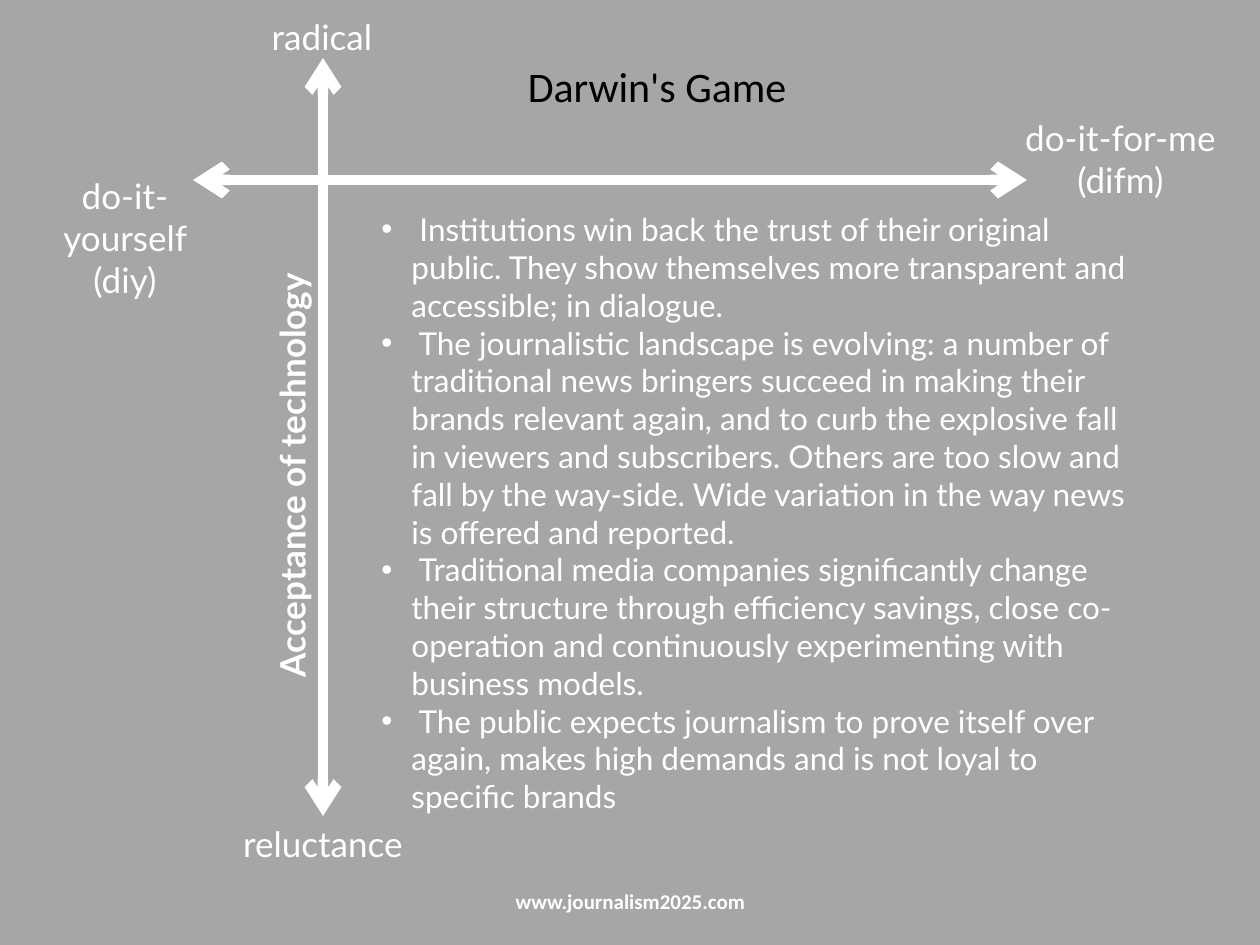
from lxml.etree import SubElement
from pptx import Presentation
from pptx.dml.color import RGBColor as RGB
from pptx.enum.shapes import MSO_CONNECTOR as CONN
from pptx.enum.text import MSO_ANCHOR as ANCHOR, PP_ALIGN as ALIGN
from pptx.oxml.ns import qn
from pptx.util import Pt

PX = 914400 / 126
COLORS = {"background": "A6A6A6", "light": "FFFFFF", "title": "000000"}
AXES = [(323, 816, 323, 58), (193, 180, 1027, 180)]
POLES = [
    ("do-it-for-me (difm)", (968, 110, 305, 55)),
    ("do-it-yourself (diy)", (30, 168, 190, 140)),
    ("radical", (178, 9, 288, 55)),
    ("reluctance", (179, 816, 288, 55)),
]
POINTS = [
    " Institutions win back the trust of their original public. They show "
    "themselves more transparent and accessible; in dialogue.",
    " The journalistic landscape is evolving: a number of traditional news "
    "bringers succeed in making their brands relevant again, and to curb the "
    "explosive fall in viewers and subscribers. Others are too slow and fall by "
    "the way-side. Wide variation in the way news is offered and reported.",
    " Traditional media companies significantly change their structure through "
    "efficiency savings, close co-operation and continuously experimenting with "
    "business models.",
    " The public expects journalism to prove itself over again, makes high "
    "demands and is not loyal to specific brands",
]


def px(n):
    """Turn pixels into EMU."""
    return round(n * PX)


def add_bullet(p, indent=30):
    """Give a paragraph a hanging bullet."""
    pPr = p._p.get_or_add_pPr()
    pPr.set("marL", str(px(indent)))
    pPr.set("indent", str(-px(indent)))
    SubElement(pPr, qn("a:buFont"), typeface="Arial")
    SubElement(pPr, qn("a:buChar"), char="•")


def add_text(slide, paragraphs, box, size=20, font="Lato", color="light",
             bold=False, align=ALIGN.LEFT, anchor=ANCHOR.TOP, rotation=0,
             bullets=False):
    """Add a wrapped text box with one format for all its paragraphs."""
    sp = slide.shapes.add_textbox(*map(px, box))
    sp.rotation = rotation
    tf = sp.text_frame
    tf.word_wrap = True
    tf.vertical_anchor = anchor
    for i, text in enumerate(paragraphs):
        p = tf.add_paragraph() if i else tf.paragraphs[0]
        p.alignment = align
        if bullets:
            add_bullet(p)
        r = p.add_run()
        r.text = text
        r.font.size = Pt(size)
        r.font.name = font
        r.font.bold = bold
        r.font.color.rgb = RGB.from_string(COLORS[color])
    return sp


def add_axis(slide, ends):
    """Add a thick line with an arrowhead at each end."""
    line = slide.shapes.add_connector(CONN.STRAIGHT, *map(px, ends))
    line.line.width = Pt(6)
    line.line.color.rgb = RGB.from_string(COLORS["light"])
    ln = line.line._get_or_add_ln()
    for end in ("a:headEnd", "a:tailEnd"):
        SubElement(ln, qn(end), type="arrow")
    SubElement(line._element.spPr, qn("a:effectLst"))


def main():
    """Build the slide and save it."""
    prs = Presentation()
    prs.slide_width, prs.slide_height = px(1260), px(945)
    slide = prs.slides.add_slide(prs.slide_layouts[6])
    fill = slide.background.fill
    fill.solid()
    fill.fore_color.rgb = RGB.from_string(COLORS["background"])
    for ends in AXES:
        add_axis(slide, ends)
    add_text(slide, ["Acceptance of technology"], (24, 394, 536, 55),
             bold=True, rotation=270)
    for text, box in POLES:
        add_text(slide, [text], box, align=ALIGN.CENTER)
    add_text(slide, POINTS, (369, 204, 785, 814), size=18, bullets=True)
    add_text(slide, ["Darwin's Game"], (154, 54, 645, 63), size=24,
             font="Calibri", color="title", align=ALIGN.RIGHT)
    add_text(slide, ["www.journalism2025.com"], (431, 876, 399, 50), size=12,
             font="Calibri", bold=True, align=ALIGN.CENTER,
             anchor=ANCHOR.MIDDLE)
    prs.save("out.pptx")


if __name__ == "__main__":
    main()
